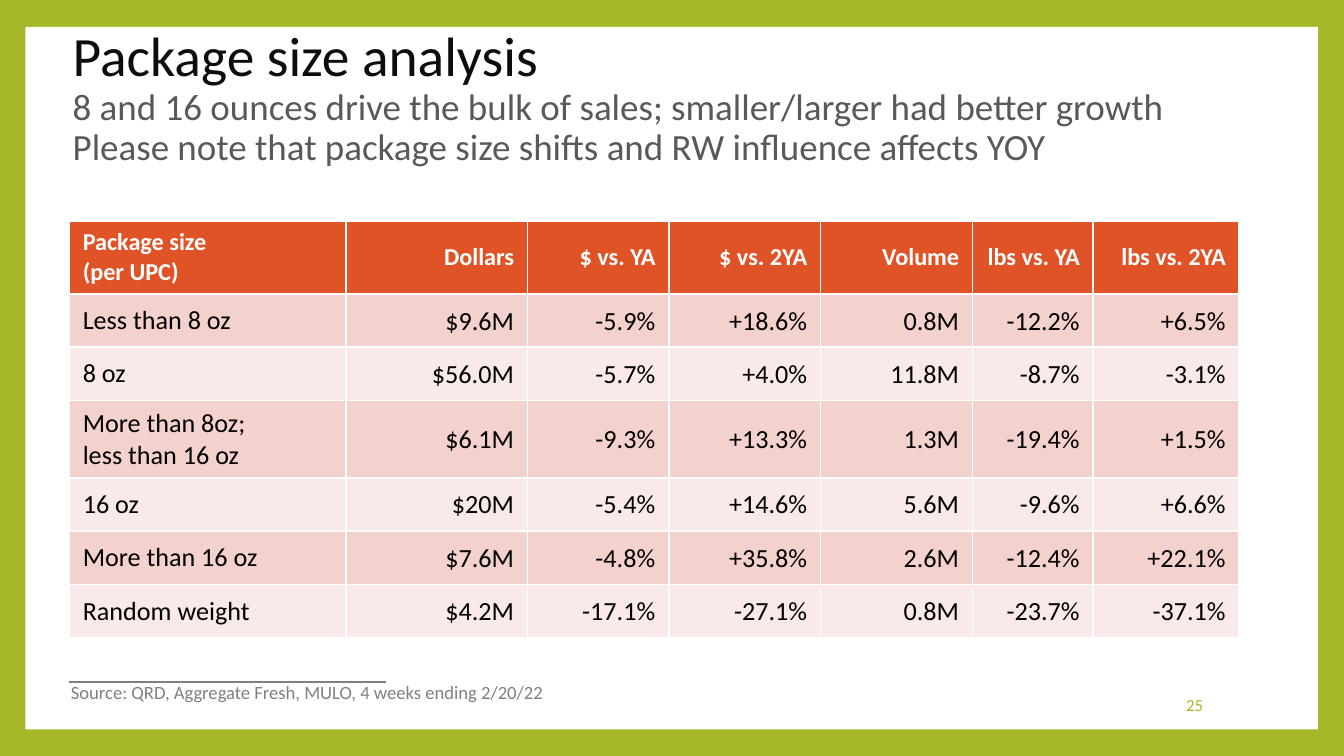
from lxml.etree import SubElement
from pptx import Presentation
from pptx.dml.color import RGBColor
from pptx.enum.shapes import MSO_CONNECTOR, MSO_SHAPE
from pptx.enum.text import MSO_ANCHOR, MSO_AUTO_SIZE, PP_ALIGN
from pptx.oxml.ns import qn
from pptx.util import Cm, Pt

GREEN, ORANGE, WHITE, BLACK = "A6B727", "DF5327", "FFFFFF", "000000"
BANDS = ["F3D1CD", "F9E9E8"]
GREY = "808080"

HEADINGS = ["Package size\v(per UPC)", "Dollars", "$ vs. YA", "$ vs. 2YA",
            "Volume", "lbs vs. YA", "lbs vs. 2YA"]
SALES = [
    ["Less than 8 oz", "$9.6M", "-5.9%", "+18.6%", "0.8M", "-12.2%", "+6.5%"],
    ["8 oz", "$56.0M", "-5.7%", "+4.0%", "11.8M", "-8.7%", "-3.1%"],
    ["More than 8oz;\vless than 16 oz", "$6.1M", "-9.3%", "+13.3%", "1.3M", "-19.4%", "+1.5%"],
    ["16 oz", "$20M", "-5.4%", "+14.6%", "5.6M", "-9.6%", "+6.6%"],
    ["More than 16 oz", "$7.6M", "-4.8%", "+35.8%", "2.6M", "-12.4%", "+22.1%"],
    ["Random weight", "$4.2M", "-17.1%", "-27.1%", "0.8M", "-23.7%", "-37.1%"],
]
COLUMN_WIDTHS = [5.23, 3.43, 2.67, 2.87, 2.87, 2.28, 2.76]
ROW_HEIGHTS = [1.17, 1.01, 1.01, 1.17, 1.01, 1.01, 1.01]


def rgb(color):
    return RGBColor.from_string(color)


class SlideBuilder:
    font_name = "Calibri"

    def __init__(self, slide):
        self.slide = slide
        self.shapes = slide.shapes

    def style(self, font, size, color, bold=False):
        font.name, font.size, font.bold = self.font_name, Pt(size), bold
        font.color.rgb = rgb(color)

    def background(self, color):
        fill = self.slide.background.fill
        fill.solid()
        fill.fore_color.rgb = rgb(color)

    def panel(self, left, top, width, height, color):
        panel = self.shapes.add_shape(
            MSO_SHAPE.RECTANGLE, Cm(left), Cm(top), Cm(width), Cm(height))
        panel.shadow.inherit = False
        panel.fill.solid()
        panel.fill.fore_color.rgb = rgb(color)
        panel.line.fill.background()

    def rule(self, left, top, width, color, weight):
        rule = self.shapes.add_connector(
            MSO_CONNECTOR.STRAIGHT, Cm(left), Cm(top), Cm(left + width), Cm(top))
        rule.line.color.rgb = rgb(color)
        rule.line.width = Pt(weight)
        SubElement(rule._element.spPr, qn("a:effectLst"))

    def title(self, left, top, width, height, lines):
        title = self.shapes.title
        # The title goes in front of the white panel
        self.shapes._spTree.append(title._element)
        title.left, title.top, title.width, title.height = map(Cm, (left, top, width, height))
        frame = title.text_frame
        frame.auto_size = MSO_AUTO_SIZE.NONE
        frame.vertical_anchor = MSO_ANCHOR.MIDDLE
        paragraph = frame.paragraphs[0]
        paragraph.alignment = PP_ALIGN.LEFT
        paragraph.line_spacing = 0.9
        for text, size, color in lines:
            if paragraph.runs:
                paragraph.add_line_break()
            run = paragraph.add_run()
            run.text = text
            self.style(run.font, size, color)

    def text(self, left, top, width, height, text, size, color,
             align=PP_ALIGN.LEFT, anchor=MSO_ANCHOR.TOP):
        frame = self.shapes.add_textbox(Cm(left), Cm(top), Cm(width), Cm(height)).text_frame
        frame.word_wrap = True
        frame.vertical_anchor = anchor
        frame.text = text
        paragraph = frame.paragraphs[0]
        paragraph.alignment = align
        self.style(paragraph.font, size, color)

    def cell(self, cell, text, fill, size, color, bold, align):
        cell.text = text
        cell.fill.solid()
        cell.fill.fore_color.rgb = rgb(fill)
        cell.vertical_anchor = MSO_ANCHOR.MIDDLE
        paragraph = cell.text_frame.paragraphs[0]
        paragraph.alignment = align
        self.style(paragraph.font, size, color, bold)

    def table(self, left, top, widths, heights, rows):
        table = self.shapes.add_table(
            len(rows), len(widths), Cm(left), Cm(top), Cm(sum(widths)), Cm(sum(heights))).table
        for column, width in zip(table.columns, widths):
            column.width = Cm(width)
        for row, height in zip(table.rows, heights):
            row.height = Cm(height)
        for r, values in enumerate(rows):
            if r == 0:
                look = ORANGE, 13, WHITE, True
            else:
                look = BANDS[(r - 1) % 2], 14, BLACK, False
            for c, value in enumerate(values):
                cell = table.cell(r, c)
                self.cell(cell, value, *look, PP_ALIGN.RIGHT if c else PP_ALIGN.LEFT)
                if r and c:
                    cell.margin_left = cell.margin_top = Cm(0.02)
                    cell.margin_bottom = 0


def main():
    presentation = Presentation()
    presentation.slide_width, presentation.slide_height = Cm(25.4), Cm(14.29)
    builder = SlideBuilder(presentation.slides.add_slide(presentation.slide_layouts[5]))

    # Green frame around a white panel
    builder.background(GREEN)
    builder.panel(0.48, 0.51, 24.43, 13.28, WHITE)

    # Title and subtitle
    builder.title(1.12, 0.86, 21.67, 2.01, [
        ("Package size analysis", 29.7, "0D0D0D"),
        ("8 and 16 ounces drive the bulk of sales; smaller/larger had better growth",
         19.8, "595959"),
        ("Please note that package size shifts and RW influence affects YOY", 19.8, "595959"),
    ])

    # Sales by package size
    builder.table(1.31, 4.18, COLUMN_WIDTHS, ROW_HEIGHTS, [HEADINGS] + SALES)

    # Source and page number
    builder.rule(1.3, 12.89, 6, GREY, 0.79)
    builder.text(1.09, 12.75, 9.78, 0.69,
                 "Source: QRD, Aggregate Fresh, MULO, 4 weeks ending 2/20/22", 10, GREY)
    builder.text(19.43, 12.95, 3.56, 0.76, "25", 9, GREEN, PP_ALIGN.RIGHT, MSO_ANCHOR.MIDDLE)

    presentation.save("out.pptx")


if __name__ == "__main__":
    main()
